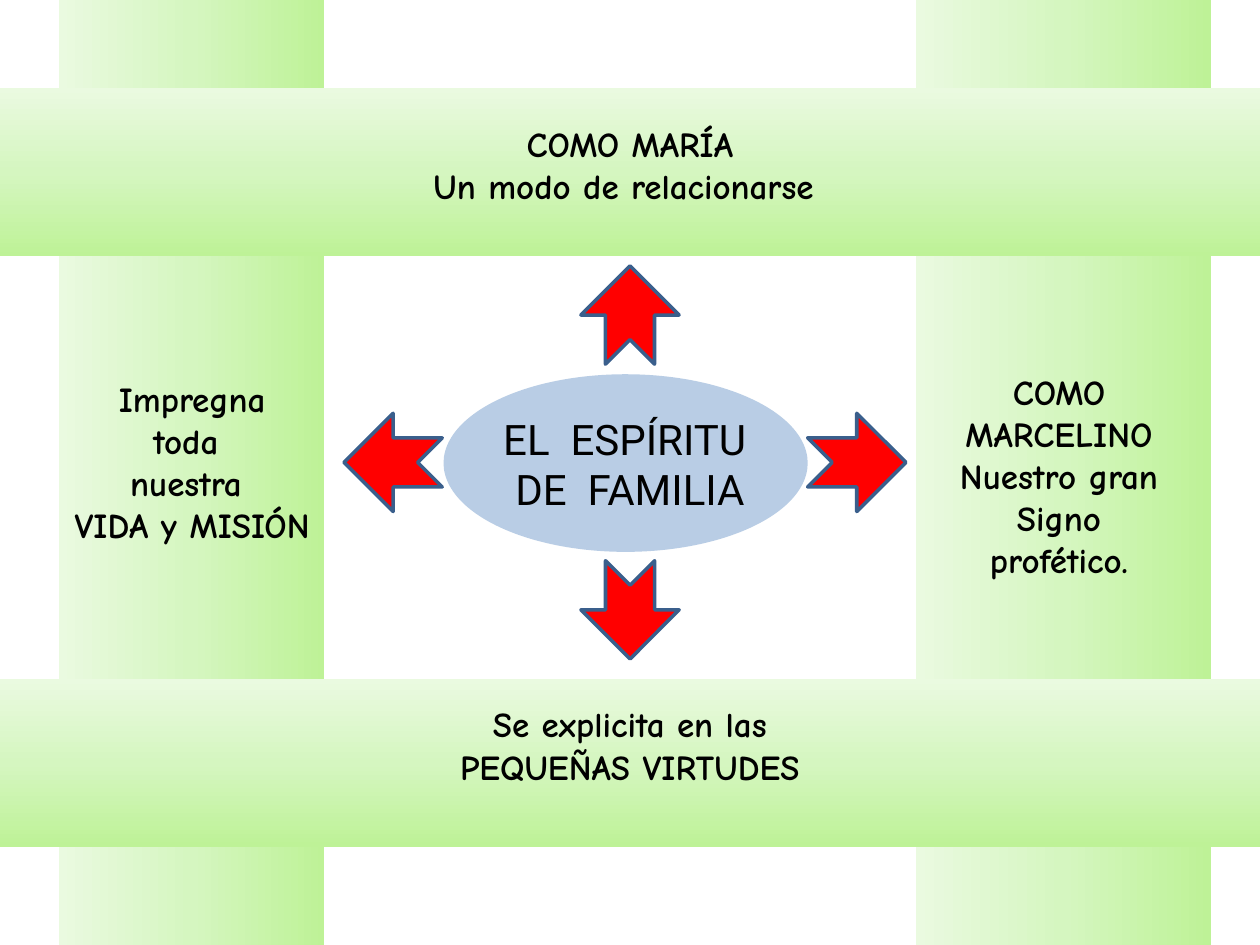
from copy import deepcopy

from pptx import Presentation
from pptx.dml.color import RGBColor
from pptx.enum import shapes, text
from pptx.util import Inches, Pt

KIND = shapes.MSO_SHAPE


def tint(code):
    return RGBColor.from_string(code)


class Board:
    red, edge, blue, ink = "FF0000", "3A5F8C", "B9CDE5", "000000"
    greens = ("BEF297", "D5F6C0", "EAFAE0")
    font, size = "Comic Neue", 20

    def __init__(self, slide):
        self.slide = slide

    def shape(self, kind, x, y, w, h, turn=0):
        item = self.slide.shapes.add_shape(
            kind, Inches(x), Inches(y), Inches(w), Inches(h))
        item.rotation = turn
        item.shadow.inherit = False
        item.line.fill.background()
        return item

    def band(self, x, y, w, h, turn=0):
        fill = self.shape(KIND.RECTANGLE, x, y, w, h, turn).fill
        fill.gradient()
        fill.gradient_angle = 90
        # A third stop goes between the two default ones
        first = fill._fill._gradFill.gsLst[0]
        first.addnext(deepcopy(first))
        for i, (stop, code) in enumerate(zip(fill.gradient_stops, self.greens)):
            stop.position = i / 2
            stop.color.rgb = tint(code)

    def oval(self, x, y, w, h):
        fill = self.shape(KIND.OVAL, x, y, w, h).fill
        fill.solid()
        fill.fore_color.rgb = tint(self.blue)

    def arrow(self, cx, cy, turn, side=0.78):
        item = self.shape(KIND.NOTCHED_RIGHT_ARROW, cx - side / 2,
                          cy - side / 2, side, side, turn)
        item.fill.solid()
        item.fill.fore_color.rgb = tint(self.red)
        item.line.color.rgb = tint(self.edge)
        item.line.width = Pt(2)

    def label(self, x, y, w, h, lines, font=font, size=size, bold=True):
        box = self.slide.shapes.add_textbox(
            Inches(x), Inches(y), Inches(w), Inches(h))
        frame = box.text_frame
        frame.word_wrap = True
        frame.auto_size = text.MSO_AUTO_SIZE.SHAPE_TO_FIT_TEXT
        frame.text = "\n".join(lines)
        for para in frame.paragraphs:
            para.alignment = text.PP_ALIGN.CENTER
            para.font.name = font
            para.font.size = Pt(size)
            para.font.bold = bold
            para.font.color.rgb = tint(self.ink)


def main():
    deck = Presentation()
    deck.slide_width, deck.slide_height = Inches(10), Inches(7.5)
    board = Board(deck.slides.add_slide(deck.slide_layouts[6]))

    # Upright bands, turned on their side, then level bands
    for mid, width in ((8.44, 2.34), (1.52, 2.11)):
        board.band(mid - 3.75, 3.75 - width / 2, 7.5, width, 270)
    for top in (5.39, 0.7):
        board.band(0, top, 10, 1.33)

    # Centre
    board.oval(3.52, 2.97, 2.89, 1.41)
    board.label(3.67, 3.23, 2.66, 0.91, ["EL  ESPÍRITU ", "DE  FAMILIA"],
                font="Roboto", size=24, bold=False)

    # Arrows around the centre
    mid_y = 3.67
    for cx, cy, turn in ((5, mid_y - 1.17, 270), (3.12, mid_y, 180),
                         (6.8, mid_y, 0), (5, mid_y + 1.17, 90)):
        board.arrow(cx, cy, turn)

    # Texts on the bands
    board.label(3.28, 0.92, 3.44, 1.11,
                ["COMO MARÍA", "Un modo de relacionarse "])
    board.label(3.28, 5.53, 3.44, 1.11,
                ["Se explicita en las", "PEQUEÑAS VIRTUDES"])
    board.label(7.27, 2.89, 2.27, 1.78,
                ["COMO MARCELINO", "Nuestro gran", "Signo", "profético."])
    board.label(0.35, 2.95, 2.35, 1.45,
                ["Impregna", "toda ", "nuestra ", "VIDA y MISIÓN"])

    deck.save("out.pptx")


if __name__ == "__main__":
    main()
